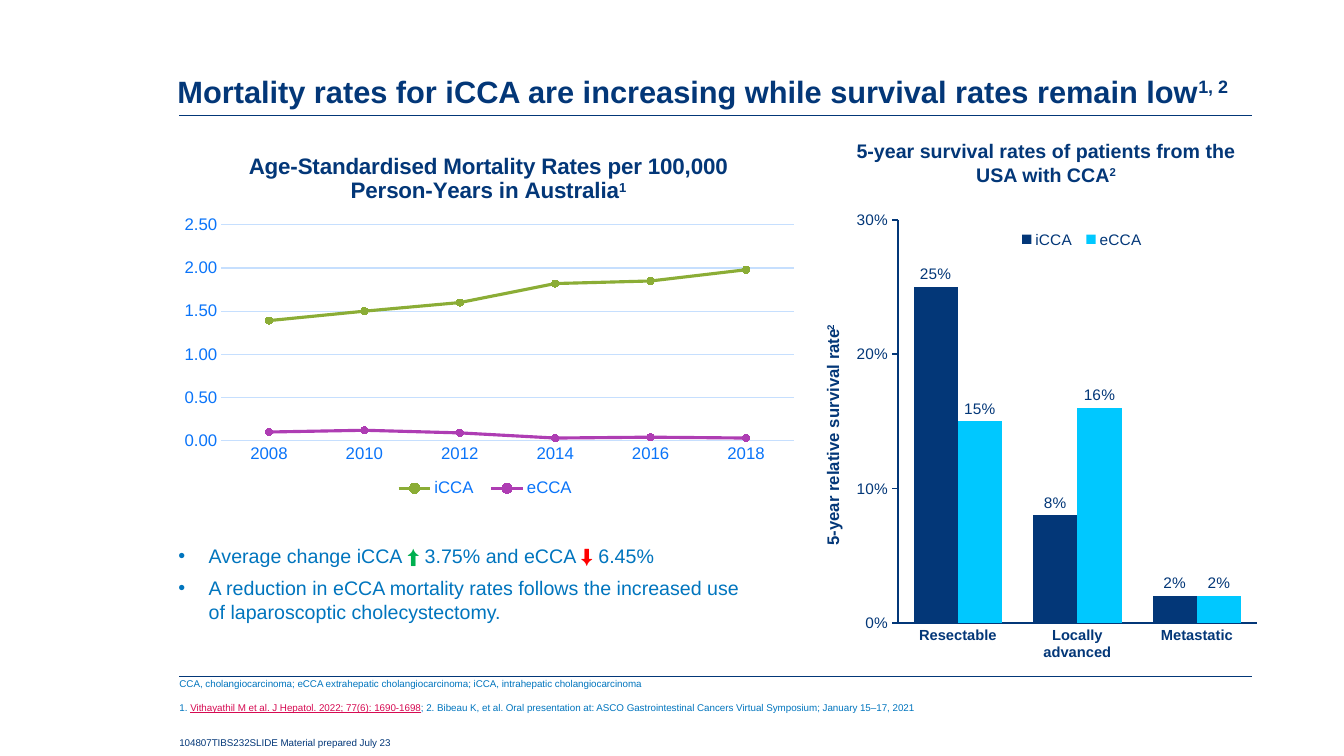
from lxml import etree
from pptx import Presentation
from pptx.chart.data import CategoryChartData
from pptx.dml.color import RGBColor
from pptx.enum.chart import XL_CHART_TYPE, XL_LABEL_POSITION, XL_LEGEND_POSITION, XL_MARKER_STYLE, XL_TICK_MARK
from pptx.enum.text import MSO_ANCHOR, MSO_AUTO_SIZE, PP_ALIGN
from pptx.oxml import parse_xml
from pptx.oxml.ns import nsdecls, qn
from pptx.util import Inches, Pt

LINE = XL_CHART_TYPE.LINE_MARKERS
BAR = XL_CHART_TYPE.COLUMN_CLUSTERED
OUT_END = XL_LABEL_POSITION.OUTSIDE_END
BOTTOM, TOP = XL_LEGEND_POSITION.BOTTOM, XL_LEGEND_POSITION.TOP
CIRCLE = XL_MARKER_STYLE.CIRCLE
NO_TICK, TICK_OUT = XL_TICK_MARK.NONE, XL_TICK_MARK.OUTSIDE
LOW, HIGH = MSO_ANCHOR.BOTTOM, MSO_ANCHOR.TOP
FIXED = MSO_AUTO_SIZE.NONE
LEFT, MID = PP_ALIGN.LEFT, PP_ALIGN.CENTER

NAVY, BLUE, SKY, PALE = "033778", "0075BE", "0A74F9", "C6DFFE"
CYAN, OLIVE, PLUM = "00C8FF", "8BAD36", "AE3DB3"
GREEN, RED, PINK = "00B050", "FF0000", "D60A52"


def color(code):
    return RGBColor.from_string(code)


def style(font, size, code=NAVY, bold=False, under=False):
    font.name, font.size, font.bold = "Arial", Pt(size), bold
    font.underline = under
    font.color.rgb = color(code)


def write(para, text, sup=False, **form):
    run = para.add_run()
    run.text = text
    style(run.font, **form)
    if sup:
        run._r.get_or_add_rPr().set("baseline", "30000")


def stroke(line, code, width):
    line.color.rgb = color(code)
    line.width = Pt(width)


def layout(x, y, wide, high, inner=False):
    target = '<c:layoutTarget val="inner"/>' if inner else ""
    sizes = zip("xywh", (x, y, wide, high))
    return parse_xml(
        f'<c:layout {nsdecls("c")}><c:manualLayout>{target}'
        '<c:xMode val="edge"/><c:yMode val="edge"/>'
        + "".join(f'<c:{key} val="{val}"/>' for key, val in sizes)
        + "</c:manualLayout></c:layout>")


def place(node, *area, inner=False):
    for old in node.findall(qn("c:layout")):
        node.remove(old)
    spot = layout(*area, inner=inner)
    if inner:
        node.insert(0, spot)
    else:
        node.find(qn("c:legendPos")).addnext(spot)


class Page:
    def __init__(self, slide):
        self.slide = slide

    def fill(self, shape, area, paras, size, code=NAVY, bold=False,
             align=LEFT, anchor=HIGH, gap=0, bullet=False, space=1, inset=(0.1, 0.05)):
        shape.left, shape.top, shape.width, shape.height = map(Inches, area)
        frame = shape.text_frame
        frame.word_wrap, frame.auto_size = True, FIXED
        frame.vertical_anchor = anchor
        frame.margin_left, frame.margin_top = map(Inches, inset)
        for row, parts in enumerate(paras):
            para = frame.add_paragraph() if row else frame.paragraphs[0]
            para.alignment, para.line_spacing = align, space
            para.space_before, para.space_after = Pt(gap if row else 0), Pt(0)
            prop = para._p.get_or_add_pPr()
            dent = Inches(0.3) if bullet else 0
            prop.set("marL", str(dent))
            prop.set("indent", str(-dent))
            if bullet:
                etree.SubElement(prop, qn("a:buChar")).set("char", "•")
            else:
                etree.SubElement(prop, qn("a:buNone"))
            for text, extra in parts:
                if text == "\n":
                    para.add_line_break()
                else:
                    write(para, text, **{"size": size, "code": code, "bold": bold, **extra})

    def box(self, area, paras, **form):
        shape = self.slide.shapes.add_textbox(*map(Inches, area))
        self.fill(shape, area, paras, **form)

    def rule(self, top):
        line = self.slide.shapes.add_connector(1, *map(Inches, (1.78, top, 12.42, top)))
        stroke(line.line, NAVY, 0.75)
        etree.SubElement(line._element.spPr, qn("a:effectLst"))

    def chart(self, kind, area, cats, rows, form, plot, key, sizes, code, seat):
        data = CategoryChartData(number_format=form)
        data.categories = cats
        for name, vals, _ in rows:
            data.add_series(name, vals)
        chart = self.slide.shapes.add_chart(kind, *map(Inches, area), data).chart
        style(chart.font, 10)
        chart.has_title = False
        chart.has_legend = True
        chart.legend.position, chart.legend.include_in_layout = seat, False
        style(chart.legend.font, sizes[1], code)
        place(chart.legend._element, *key)
        place(chart._chartSpace.chart.plotArea, *plot, inner=True)
        for axis, size in zip((chart.category_axis, chart.value_axis), sizes):
            style(axis.tick_labels.font, size, code)
            axis.major_tick_mark = axis.minor_tick_mark = NO_TICK
        ticks = chart.value_axis.tick_labels
        ticks.number_format, ticks.number_format_is_linked = form, False
        return chart

    def trend(self, area, cats, rows, title):
        chart = self.chart(LINE, area, cats, rows, "0.00", (0.08, 0.24, 0.9, 0.59),
                           (0.34, 0.92, 0.31, 0.08), (12, 12), SKY, BOTTOM)
        chart.has_title = True
        para = chart.chart_title.text_frame.paragraphs[0]
        write(para, title, size=16, bold=True)
        write(para, "1", sup=True, size=16, bold=True)
        stroke(chart.category_axis.format.line, PALE, 0.75)
        stroke(chart.value_axis.major_gridlines.format.line, PALE, 0.75)
        chart.value_axis.format.line.fill.background()
        for series, (_, _, code) in zip(chart.plots[0].series, rows):
            series.smooth = False
            stroke(series.format.line, code, 2.25)
            mark = series.marker
            mark.style, mark.size = CIRCLE, 5
            mark.format.fill.solid()
            mark.format.fill.fore_color.rgb = color(code)
            stroke(mark.format.line, code, 0.75)

    def bars(self, area, cats, rows, title):
        chart = self.chart(BAR, area, cats, rows, "0%", (0.21, 0.1, 0.78, 0.83),
                           (0.46, 0.11, 0.3, 0.06), (10.5, 11), NAVY, TOP)
        chart.category_axis.tick_labels.font.bold = True
        axis = chart.value_axis
        axis.has_major_gridlines = False
        axis.major_tick_mark = TICK_OUT
        axis.minimum_scale, axis.maximum_scale, axis.major_unit = 0, 0.3, 0.1
        para = axis.axis_title.text_frame.paragraphs[0]
        write(para, title, size=12, bold=True)
        write(para, "2", sup=True, size=12, bold=True)
        for side in (chart.category_axis, axis):
            stroke(side.format.line, NAVY, 1)
        plot = chart.plots[0]
        plot.gap_width, plot.overlap, plot.vary_by_categories = 70, 0, False
        for series, (_, _, code) in zip(plot.series, rows):
            series.format.fill.solid()
            series.format.fill.fore_color.rgb = color(code)
            tags = series.data_labels
            tags.show_value, tags.position = True, OUT_END
            tags.number_format, tags.number_format_is_linked = "0%", False
            style(tags.font, 11)


def main():
    deck = Presentation()
    deck.slide_width, deck.slide_height = Inches(13.33), Inches(7.5)
    slide = deck.slides.add_slide(deck.slide_layouts[3])
    page = Page(slide)
    title, points, notes = slide.placeholders

    for top in (1.15, 6.71):
        page.rule(top)
    page.fill(title, (1.66, 0.25, 10.76, 0.89), [[
        ("Mortality rates for iCCA are increasing while survival rates remain low", {}),
        ("1, 2", {"sup": True})]], size=22, bold=True, anchor=LOW, space=0.9)
    page.trend((1.69, 1.36, 6.31, 3.63), ["2008", "2010", "2012", "2014", "2016", "2018"],
               [("iCCA", (1.39, 1.5, 1.6, 1.82, 1.85, 1.98), OLIVE),
                ("eCCA", (0.1, 0.12, 0.09, 0.03, 0.04, 0.03), PLUM)],
               "Age-Standardised Mortality Rates per 100,000 Person-Years in Australia")
    page.fill(points, (1.67, 5.35, 5.92, 1.3), [
        [("Average change iCCA ", {}), ("⬆", {"code": GREEN}), (" 3.75% and eCCA ", {}),
         ("⬇", {"code": RED}), (" 6.45%", {})],
        [("A reduction in eCCA mortality rates follows the increased use of "
          "laparoscoptic cholecystectomy.", {})]],
        size=14, code=BLUE, gap=6, bullet=True)
    page.box((7.92, 1.33, 4.91, 0.57), [[
        ("5-year survival rates of patients from the", {}), ("\n", {}),
        ("USA with CCA", {}), ("2", {"sup": True})]], size=14, bold=True, align=MID)
    page.bars((7.95, 1.7, 4.56, 4.85), ["Resectable", "Locally advanced", "Metastatic"],
              [("iCCA", (0.25, 0.08, 0.02), NAVY), ("eCCA", (0.15, 0.16, 0.02), CYAN)],
              "5-year relative survival rate")
    page.fill(notes, (1.78, 6.72, 10.64, 0.5), [
        [("CCA, cholangiocarcinoma; eCCA extrahepatic cholangiocarcinoma; "
          "iCCA, intrahepatic cholangiocarcinoma", {})],
        [("1. ", {}),
         ("Vithayathil M et al. J Hepatol. 2022; 77(6): 1690-1698", {"code": PINK, "under": True}),
         ("; 2. Bibeau K, et al. Oral presentation at: ASCO Gastrointestinal Cancers "
          "Virtual Symposium; January 15–17, 2021", {})]],
        size=7, code=BLUE, gap=9, inset=(0, 0))
    page.box((1.68, 7.26, 3.43, 0.22), [[("104807TIBS232SLIDE Material prepared July 23", {})]], size=7)
    deck.save("out.pptx")


if __name__ == "__main__":
    main()
